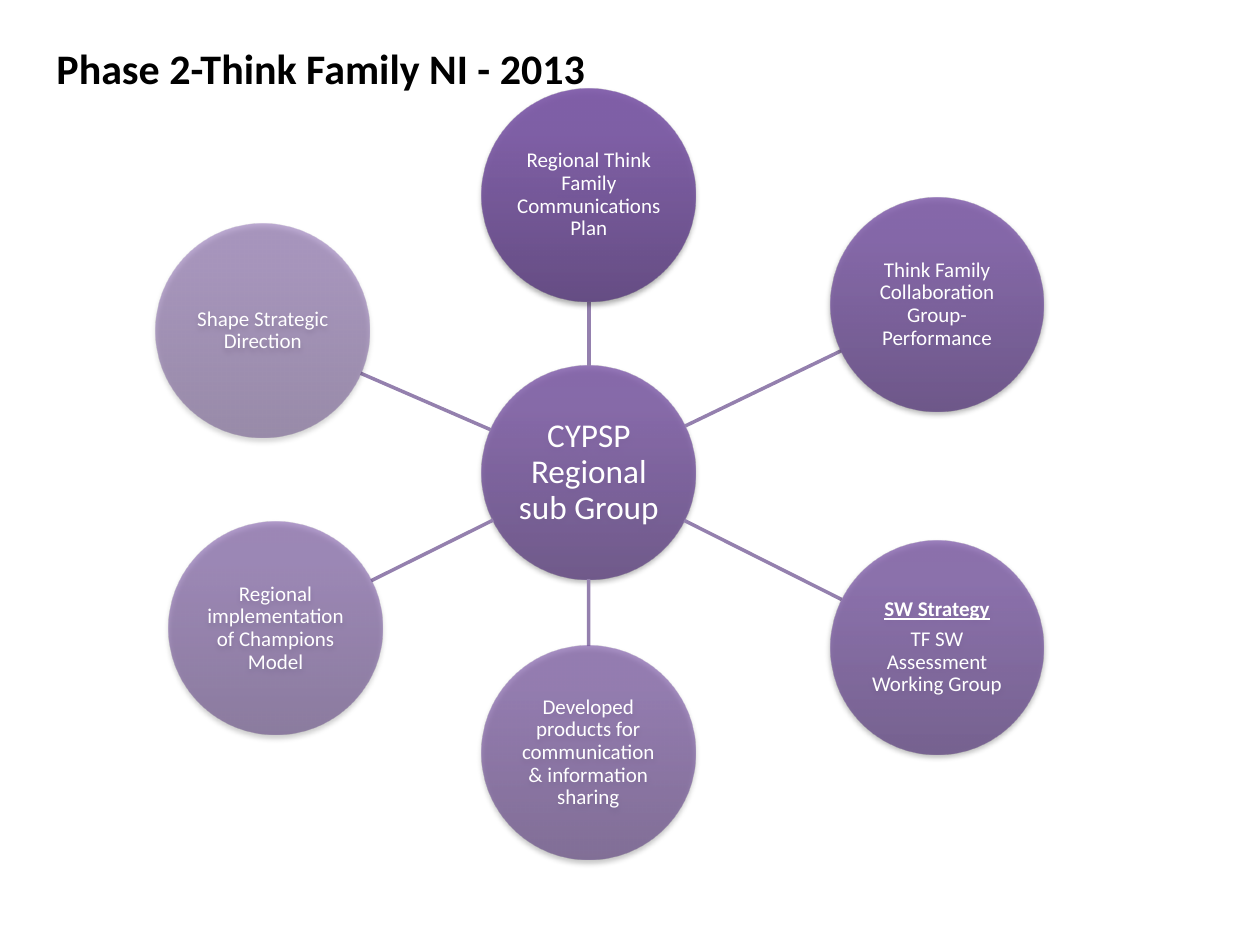
"""Build a hub-and-spoke slide on the second phase of Think Family NI."""
from math import hypot

from lxml.etree import SubElement
from pptx import Presentation
from pptx.dml.color import RGBColor
from pptx.enum.shapes import MSO_CONNECTOR, MSO_SHAPE
from pptx.enum.text import MSO_ANCHOR, MSO_AUTO_SIZE, PP_ALIGN
from pptx.oxml.ns import qn
from pptx.util import Pt

TITLE = "Phase 2-Think Family NI - 2013"
HUB = (["CYPSP Regional sub Group"], 336.5, 270, 80)
SATELLITES = [
    (["Regional Think Family Communications Plan"], 336.5, 111.5, 90),
    (["Think Family Collaboration Group-Performance"], 535.5, 174, 82),
    (["SW Strategy", "TF SW Assessment Working Group"], 535.5, 370, 74),
    (["Developed products for communication & information sharing"], 336.2, 430.2, 66),
    (["Regional implementation of Champions Model"], 157.5, 359, 58),
    (["Shape Strategic Direction"], 150.2, 189, 50),
]
GRADIENT = [(0, "5F4480"), (80, "7B58A6"), (100, "7C57A8")]
SPOKE_COLOR = "9480AE"
DIAMETER = 122
RADIUS = DIAMETER / 2
FONT = "Calibri"


def color(hex_string):
    """Return the colour for a hex string."""
    return RGBColor.from_string(hex_string)


def add_color(parent, hex_string, opacity):
    """Add a colour element with an opacity in percent."""
    element = SubElement(parent, qn("a:srgbClr"), val=hex_string)
    SubElement(element, qn("a:alpha"), val=str(opacity * 1000))


def style_circle(shape, opacity):
    """Give a circle its translucent upward gradient and soft shadow."""
    shape.line.fill.background()
    shape.shadow.inherit = False
    properties = shape._element.spPr
    gradient = SubElement(properties, qn("a:gradFill"), rotWithShape="1")
    stops = SubElement(gradient, qn("a:gsLst"))
    for position, hex_string in GRADIENT:
        stop = SubElement(stops, qn("a:gs"), pos=str(position * 1000))
        add_color(stop, hex_string, opacity)
    SubElement(gradient, qn("a:lin"), ang=str(270 * 60000), scaled="0")
    properties.find(qn("a:prstGeom")).addnext(gradient)
    shadow = SubElement(
        properties.find(qn("a:effectLst")), qn("a:outerShdw"),
        blurRad=str(Pt(3.1)), dist=str(Pt(1.8)), dir=str(90 * 60000), rotWithShape="0",
    )
    add_color(shadow, "000000", 35)


def add_circle(slide, node, size):
    """Add a circle with centred text around the node's centre."""
    lines, x, y, opacity = node
    shape = slide.shapes.add_shape(
        MSO_SHAPE.OVAL, Pt(x - RADIUS), Pt(y - RADIUS), Pt(DIAMETER), Pt(DIAMETER)
    )
    style_circle(shape, opacity)
    frame = shape.text_frame
    frame.word_wrap = True
    frame.vertical_anchor = MSO_ANCHOR.MIDDLE
    frame.margin_left = frame.margin_right = Pt(0.75)
    frame.margin_top = frame.margin_bottom = Pt(0.75)
    frame.text = "\n".join(lines)
    for index, paragraph in enumerate(frame.paragraphs):
        is_heading = index < len(lines) - 1
        paragraph.alignment = PP_ALIGN.CENTER
        paragraph.line_spacing = 0.9
        paragraph.space_after = Pt(round(0.35 * size, 2))
        paragraph.font.name = FONT
        paragraph.font.size = Pt(size)
        paragraph.font.color.rgb = color("FFFFFF")
        paragraph.font.bold = is_heading
        paragraph.font.underline = is_heading


def add_spoke(slide, start, end):
    """Join the edges of two circles along the line between their centres."""
    x1, y1 = start[1:3]
    x2, y2 = end[1:3]
    distance = hypot(x2 - x1, y2 - y1)
    step_x = RADIUS * (x2 - x1) / distance
    step_y = RADIUS * (y2 - y1) / distance
    spoke = slide.shapes.add_connector(
        MSO_CONNECTOR.STRAIGHT,
        Pt(x1 + step_x), Pt(y1 + step_y), Pt(x2 - step_x), Pt(y2 - step_y),
    )
    spoke.line.color.rgb = color(SPOKE_COLOR)
    spoke.line.width = Pt(2)
    SubElement(spoke._element.spPr, qn("a:effectLst"))


def add_title(slide):
    """Add the slide title."""
    box = slide.shapes.add_textbox(Pt(25.2), Pt(21), Pt(321), Pt(36))
    frame = box.text_frame
    frame.word_wrap = False
    frame.auto_size = MSO_AUTO_SIZE.SHAPE_TO_FIT_TEXT
    frame.text = TITLE
    font = frame.paragraphs[0].font
    font.name = FONT
    font.size = Pt(24)
    font.bold = True
    font.color.rgb = color("000000")


def main():
    """Build and save the presentation."""
    presentation = Presentation()
    presentation.slide_width = Pt(720)
    presentation.slide_height = Pt(540)
    slide = presentation.slides.add_slide(presentation.slide_layouts[6])
    add_circle(slide, HUB, 19)
    for satellite in SATELLITES:
        add_spoke(slide, HUB, satellite)
        add_circle(slide, satellite, 12)
    add_title(slide)
    presentation.save("out.pptx")


if __name__ == "__main__":
    main()
